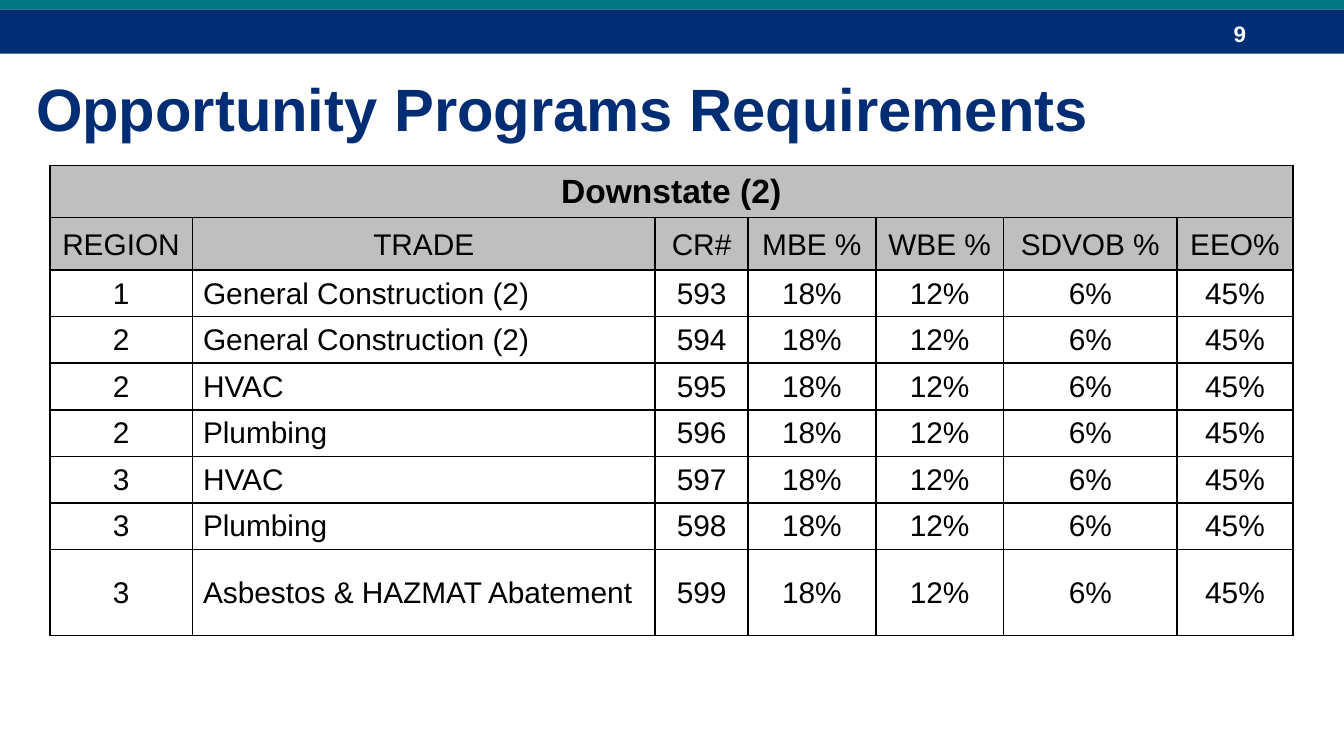
import pptx
import pptx.util
import pptx.dml.color
import pptx.enum.shapes
import pptx.enum.text
import pptx.oxml
import pptx.oxml.ns

Inches, Pt = pptx.util.Inches, pptx.util.Pt
RGBColor = pptx.dml.color.RGBColor
ALIGN = pptx.enum.text.PP_ALIGN
MIDDLE = pptx.enum.text.MSO_ANCHOR.MIDDLE

NAVY = RGBColor(0x00, 0x2D, 0x73)
TEAL = RGBColor(0x00, 0x76, 0x81)
GRAY = RGBColor(0xBF, 0xBF, 0xBF)
WHITE = RGBColor(0xFF, 0xFF, 0xFF)
BLACK = RGBColor(0x00, 0x00, 0x00)

TITLE = "Opportunity Programs Requirements"
PAGE_NUMBER = "9"
TABLE_TITLE = "Downstate (2)"
HEADINGS = ["REGION", "TRADE", "CR#", "MBE %", "WBE %", "SDVOB %", "EEO%"]
GOALS = ["18%", "12%", "6%", "45%"]
FIRST_CR = 593
TRADES = [
    ("1", "General Construction (2)"),
    ("2", "General Construction (2)"),
    ("2", "HVAC"),
    ("2", "Plumbing"),
    ("3", "HVAC"),
    ("3", "Plumbing"),
    ("3", "Asbestos & HAZMAT Abatement"),
]
TABLE_LEFT, TABLE_TOP, TABLE_WIDTH, TABLE_HEIGHT = 0.37, 1.23, 9.25, 3.5
COLUMN_SHARES = [1.06, 3.44, 0.69, 0.95, 0.95, 1.29, 0.86]
HEADER_HEIGHT, LAST_HEIGHT = 0.39, 0.64
BANDS = [(0.07, 0.33, NAVY), (-0.02, 0.09, TEAL)]  # top, height, colour


def add_span(para, text, size, color, bold=False):
    span = para.add_run()
    span.text = text
    span.font.name = "Arial"
    span.font.size = Pt(size)
    span.font.bold = bold
    span.font.color.rgb = color


def add_band(page, top, height, color):
    band = page.shapes.add_shape(
        pptx.enum.shapes.MSO_SHAPE.RECTANGLE,
        0, Inches(top), Inches(10), Inches(height))
    band.shadow.inherit = False
    band.fill.solid()
    band.fill.fore_color.rgb = color
    band.line.fill.background()


def add_label(page, place, text, size, color):
    box = page.shapes.add_textbox(*map(Inches, place))
    box.text_frame.word_wrap = True
    box.text_frame.vertical_anchor = MIDDLE
    add_span(box.text_frame.paragraphs[0], text, size, color, bold=True)


def draw_borders(cell):
    """Put a thin black line on all four sides; call before filling the cell."""
    properties = cell._tc.get_or_add_tcPr()
    for side in ("lnL", "lnR", "lnT", "lnB"):
        properties.append(pptx.oxml.parse_xml(
            f'<a:{side} {pptx.oxml.ns.nsdecls("a")} w="{Pt(1)}">'
            f'<a:solidFill><a:srgbClr val="{BLACK}"/></a:solidFill></a:{side}>'))


def fill_cell(cell, text, row, column):
    cell.vertical_anchor = MIDDLE
    cell.margin_left = cell.margin_right = Inches(0.08)
    cell.margin_top = cell.margin_bottom = 0
    para = cell.text_frame.paragraphs[0]
    is_trade = row > 1 and column == 1
    para.alignment = ALIGN.LEFT if is_trade else ALIGN.CENTER
    if row == 1:
        para.line_spacing = 1.07
    elif row > 1:
        para.line_spacing = 1.03
        para.space_after = Pt(0.1)
        indents = para._p.get_or_add_pPr()
        indents.set("marL", str(Inches(0.01)))
        indents.set("indent", str(-Inches(0.01)))
    if text:
        add_span(para, text, 18 if row == 0 else 16, BLACK, bold=row == 0)
    draw_borders(cell)
    if row < 2:
        cell.fill.solid()
        cell.fill.fore_color.rgb = GRAY
    else:
        cell.fill.background()


def add_goals_table(page):
    rows = [[TABLE_TITLE] + [""] * (len(HEADINGS) - 1), HEADINGS]
    for number, (region, trade) in enumerate(TRADES, FIRST_CR):
        rows.append([region, trade, str(number)] + GOALS)
    middle_count = len(TRADES) - 1
    middle_height = (TABLE_HEIGHT - 2 * HEADER_HEIGHT - LAST_HEIGHT) / middle_count
    heights = [HEADER_HEIGHT] * 2 + [middle_height] * middle_count + [LAST_HEIGHT]

    place = (TABLE_LEFT, TABLE_TOP, TABLE_WIDTH, TABLE_HEIGHT)
    table = page.shapes.add_table(
        len(rows), len(HEADINGS), *map(Inches, place)).table
    table.first_row = table.horz_banding = False
    for column, share in zip(table.columns, COLUMN_SHARES):
        column.width = Inches(TABLE_WIDTH * share / sum(COLUMN_SHARES))
    for line, height in zip(table.rows, heights):
        line.height = Inches(height)
    for row, texts in enumerate(rows):
        for column, text in enumerate(texts):
            fill_cell(table.cell(row, column), text, row, column)
    table.cell(0, 0).merge(table.cell(0, len(HEADINGS) - 1))


def main():
    deck = pptx.Presentation()
    deck.slide_width = Inches(10)
    deck.slide_height = deck.slide_width * 9 // 16
    page = deck.slides.add_slide(deck.slide_layouts[6])
    for band in BANDS:
        add_band(page, *band)
    add_label(page, (9.08, 0.1, 0.75, 0.3), PAGE_NUMBER, 12, WHITE)
    add_label(page, (0.17, 0.48, 9.5, 0.64), TITLE, 32, NAVY)
    add_goals_table(page)
    deck.save("out.pptx")


if __name__ == "__main__":
    main()
